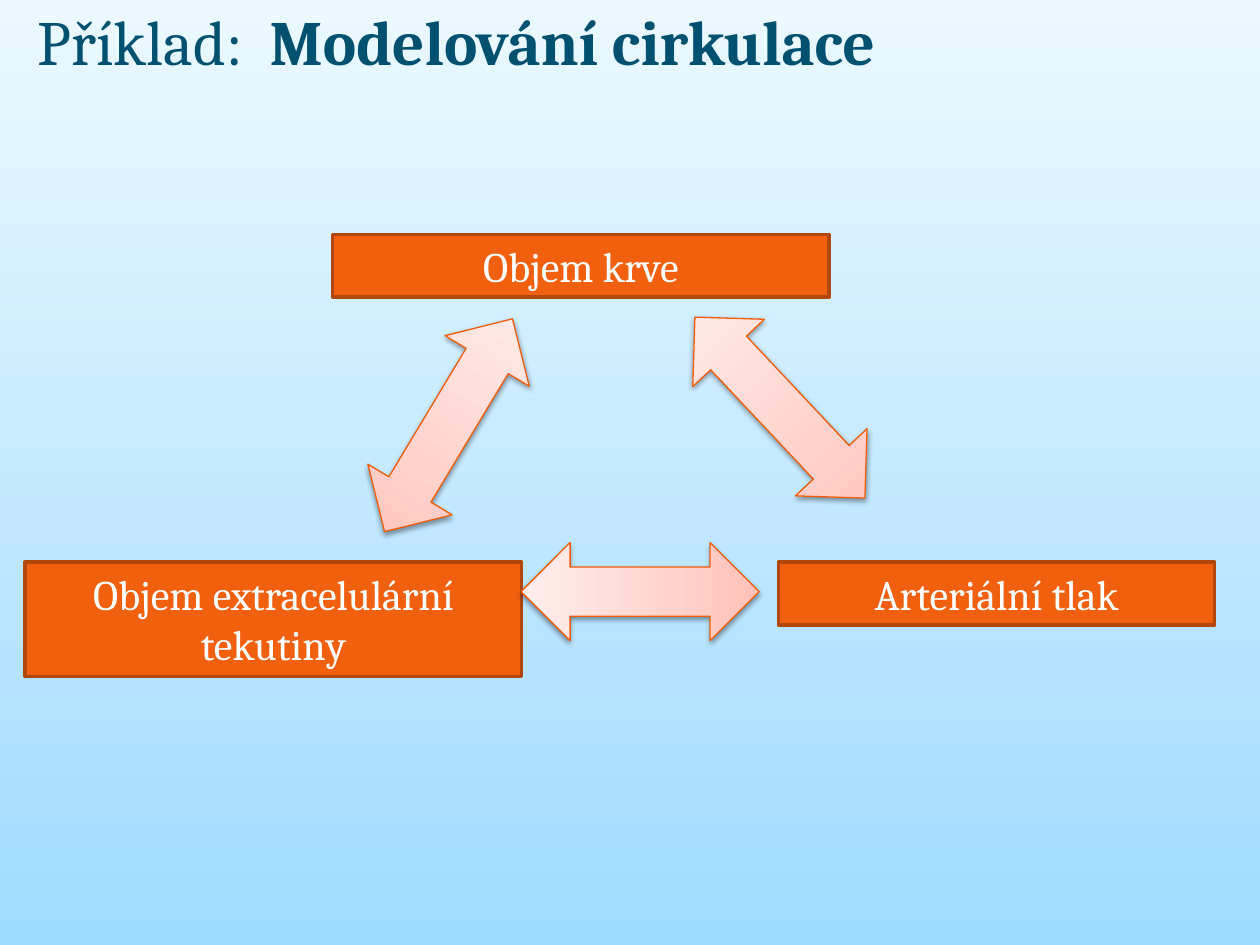
from copy import deepcopy

from lxml import etree
from pptx import Presentation
from pptx.dml.color import RGBColor
from pptx.enum import shapes, text
from pptx.oxml import parse_xml
from pptx.oxml.ns import nsdecls, qn
from pptx.util import Inches, Pt

FONT = "Cambria"
SKY_TOP = RGBColor(0xEB, 0xF9, 0xFF)
SKY_BOTTOM = RGBColor(0x9F, 0xDA, 0xFF)
TITLE_BLUE = RGBColor(0x00, 0x50, 0x70)
ORANGE = RGBColor(0xF1, 0x60, 0x0F)
DARK_ORANGE = RGBColor(0xB2, 0x47, 0x0B)
ARROW_LINE = RGBColor(0xF1, 0x5C, 0x09)
PINK = RGBColor(0xFF, 0xC0, 0xB6)
MID_PINK = RGBColor(0xFF, 0xD2, 0xCC)
PALE_PINK = RGBColor(0xFF, 0xEE, 0xEC)
WHITE = RGBColor(0xFF, 0xFF, 0xFF)


def set_gradient(fill, angle, stops):
    fill.gradient()
    fill.gradient_angle = angle
    gs_list = fill._fill._gradFill.find(qn("a:gsLst"))
    while len(gs_list) < len(stops):
        gs_list.append(deepcopy(gs_list[0]))
    for stop, (position, color) in zip(fill.gradient_stops, stops):
        stop.position = position
        stop.color.rgb = color


prs = Presentation()
prs.slide_width = Inches(10)
prs.slide_height = Inches(7.5)
s = prs.slides.add_slide(prs.slide_layouts[5])
set_gradient(s.background.fill, 270, [(0, SKY_TOP), (1, SKY_BOTTOM)])

boxes = [
    ("Objem krve", 2.64, 1.86, 3.94, 0.5),
    ("Objem extracelulární tekutiny", 0.2, 4.46, 3.94, 0.91),
    ("Arteriální tlak", 6.18, 4.46, 3.46, 0.5),
]
for label, x, y, w, h in boxes:
    sp = s.shapes.add_shape(
        shapes.MSO_SHAPE.RECTANGLE, Inches(x), Inches(y), Inches(w), Inches(h))
    sp.shadow.inherit = False
    sp.fill.solid()
    sp.fill.fore_color.rgb = ORANGE
    sp.line.color.rgb = DARK_ORANGE
    sp.line.width = Pt(2)
    tf = sp.text_frame
    tf.text = label
    tf.word_wrap = True
    tf.auto_size = text.MSO_AUTO_SIZE.SHAPE_TO_FIT_TEXT
    tf.vertical_anchor = text.MSO_ANCHOR.TOP
    p = tf.paragraphs[0]
    p.alignment = text.PP_ALIGN.CENTER
    r = p.runs[0]
    r.font.name = FONT
    r.font.size = Pt(24)
    r.font.color.rgb = WHITE

arrows = [
    (3.17, 2.39, 1.97, 31),
    (5.8, 2.25, 1.97, 316.8),
    (4.69, 3.75, 1.89, 270),
]
for x, y, h, rotation in arrows:
    sp = s.shapes.add_shape(
        shapes.MSO_SHAPE.UP_DOWN_ARROW, Inches(x), Inches(y), Inches(0.78), Inches(h))
    sp.rotation = rotation
    set_gradient(sp.fill, 90, [(0, PINK), (0.35, MID_PINK), (1, PALE_PINK)])
    sp.line.color.rgb = ARROW_LINE
    sp.line.width = Pt(0.75)
    sp.shadow.inherit = False
    effects = sp._element.spPr.find(qn("a:effectLst"))
    effects.append(parse_xml(
        f'<a:outerShdw {nsdecls("a")} blurRad="{Pt(3.1)}" dist="{Pt(1.6)}" '
        'dir="5400000" rotWithShape="0"><a:srgbClr val="000000">'
        '<a:alpha val="38000"/></a:srgbClr></a:outerShdw>'))

title = s.shapes.title
title.left, title.top = Inches(0.2), Inches(-0.03)
title.width, title.height = Inches(8.05), Inches(0.71)
tf = title.text_frame
tf.word_wrap = True
tf.auto_size = text.MSO_AUTO_SIZE.NONE
tf.vertical_anchor = text.MSO_ANCHOR.TOP
p = tf.paragraphs[0]
p.alignment = text.PP_ALIGN.LEFT
tabs = etree.SubElement(p._p.get_or_add_pPr(), qn("a:tabLst"))
etree.SubElement(tabs, qn("a:tab"), pos=str(Inches(1.84)), algn="l")
for words, bold in [("Příklad:\t", False), ("Modelování cirkulace", True)]:
    r = p.add_run()
    r.text = words
    r.font.name = FONT
    r.font.size = Pt(36)
    r.font.bold = bold
    r.font.color.rgb = TITLE_BLUE

prs.save("out.pptx")
